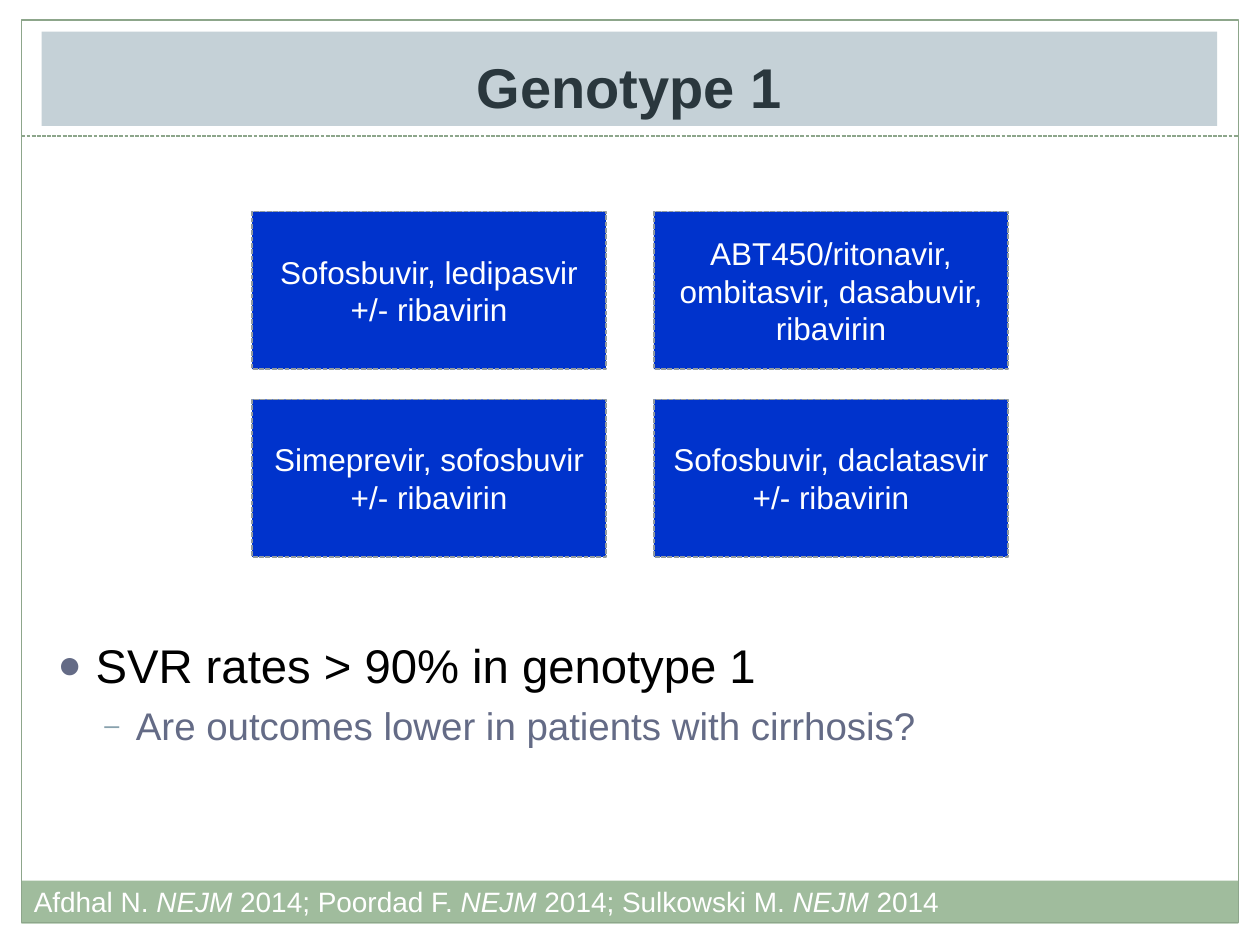
from lxml import etree
from pptx import Presentation
from pptx.dml.color import RGBColor
from pptx.enum import dml, shapes, text
from pptx.oxml import ns
from pptx.util import Inches, Pt

FONT = "Arial"
GREEN = "8DA68B"
SLATE = "646B86"
WHITE = "FFFFFF"


def color(value):
    """Turn a hex string into a colour."""
    return RGBColor.from_string(value)


def add_span(para, words, size, ink, bold=False, italic=False):
    """Append one formatted run to a paragraph."""
    span = para.add_run()
    span.text = words
    font = span.font
    font.name, font.size = FONT, Pt(size)
    font.bold, font.italic = bold, italic
    font.color.rgb = color(ink)


def style_line(line, ink, width, dashed=False):
    """Set the colour, width and dash of a line."""
    line.color.rgb = color(ink)
    line.width = Pt(width)
    if dashed:
        line.dash_style = dml.MSO_LINE.SQUARE_DOT


def add_panel(slide, left, top, width, height, fill=None):
    """Add a plain rectangle without shadow or outline."""
    panel = slide.shapes.add_shape(
        shapes.MSO_SHAPE.RECTANGLE,
        Inches(left), Inches(top), Inches(width), Inches(height))
    panel.shadow.inherit = False
    panel.line.fill.background()
    if fill:
        panel.fill.solid()
        panel.fill.fore_color.rgb = color(fill)
    else:
        panel.fill.background()
    return panel


def add_label(panel, words, size, ink, anchor, bold=False):
    """Write one centred paragraph in a rectangle."""
    frame = panel.text_frame
    frame.word_wrap = True
    frame.vertical_anchor = anchor
    para = frame.paragraphs[0]
    para.alignment = text.PP_ALIGN.CENTER
    add_span(para, words, size, ink, bold)


def add_text_box(slide, left, top, width, height):
    """Add a wrapping text box and return its text frame."""
    box = slide.shapes.add_textbox(
        Inches(left), Inches(top), Inches(width), Inches(height))
    box.text_frame.word_wrap = True
    return box.text_frame


def add_rule(slide, left, right, top):
    """Add a dashed horizontal line."""
    rule = slide.shapes.add_connector(
        shapes.MSO_CONNECTOR.STRAIGHT,
        Inches(left), Inches(top), Inches(right), Inches(top))
    style_line(rule.line, GREEN, 0.75, dashed=True)
    etree.SubElement(rule._element.spPr, ns.qn("a:effectLst"))


def set_bullet(para, mark, ink, percent, indent, hanging):
    """Give a paragraph a coloured bullet and a hanging indent."""
    props = para._p.get_or_add_pPr()
    props.set("marL", str(Inches(indent)))
    props.set("indent", str(-Inches(hanging)))
    tint = etree.SubElement(props, ns.qn("a:buClr"))
    etree.SubElement(tint, ns.qn("a:srgbClr"), val=ink)
    etree.SubElement(props, ns.qn("a:buSzPct"), val=str(percent * 1000))
    etree.SubElement(props, ns.qn("a:buFont"), typeface=FONT)
    etree.SubElement(props, ns.qn("a:buChar"), char=mark)


def add_frame(slide):
    """Draw the footer band, the border and the rule under the title."""
    add_panel(slide, 0.17, 6.99, 9.66, 0.34, "A0BC9D")
    border = add_panel(slide, 0.17, 0.16, 9.66, 7.16)
    style_line(border.line, GREEN, 0.75)
    add_rule(slide, 0.17, 9.83, 1.08)


def add_citations(slide):
    """Write the references with the journal name in italics."""
    para = add_text_box(slide, 0.17, 6.97, 9.5, 0.37).paragraphs[0]
    pieces = ("Afdhal N. ", "NEJM", " 2014; Poordad F. ", "NEJM",
              " 2014; Sulkowski M. ", "NEJM", " 2014")
    for piece in pieces:
        add_span(para, piece, 16, WHITE, italic=piece == "NEJM")


def add_findings(slide):
    """Write the two-level bullet list."""
    frame = add_text_box(slide, 0.36, 5, 9.08, 1.38)
    finding = frame.paragraphs[0]
    set_bullet(finding, "●", SLATE, 85, 0.3, 0.3)
    add_span(finding, "SVR rates > 90% in genotype 1", 27, "000000")
    question = frame.add_paragraph()
    question.level = 1
    set_bullet(question, "–", "88A1AD", 70, 0.62, 0.25)
    question.space_before = Pt(5)
    add_span(question, "Are outcomes lower in patients with cirrhosis?", 22, SLATE)


def add_regimens(slide):
    """Lay out the drug regimens in a two-by-two grid."""
    regimens = (
        ("Sofosbuvir, ledipasvir +/- ribavirin",
         "ABT450/ritonavir, ombitasvir, dasabuvir, ribavirin"),
        ("Simeprevir, sofosbuvir +/- ribavirin",
         "Sofosbuvir, daclatasvir +/- ribavirin"),
    )
    for row, names in enumerate(regimens):
        for column, name in enumerate(names):
            panel = add_panel(slide, 2 + 3.19 * column, 1.68 + 1.49 * row,
                              2.81, 1.25, "0033CC")
            style_line(panel.line, "929B9F", 0.9, dashed=True)
            add_label(panel, name, 18, WHITE, text.MSO_ANCHOR.MIDDLE)


def add_title(slide):
    """Add the title band."""
    band = add_panel(slide, 0.33, 0.25, 9.33, 0.75, "C5D1D7")
    add_label(band, "Genotype 1", 32, "2A373D", text.MSO_ANCHOR.BOTTOM, bold=True)


def main():
    """Build the slide and save the deck."""
    deck = Presentation()
    deck.slide_width, deck.slide_height = Inches(10), Inches(7.5)
    slide = deck.slides.add_slide(deck.slide_layouts[6])
    add_frame(slide)
    add_citations(slide)
    add_findings(slide)
    add_regimens(slide)
    add_title(slide)
    deck.save("out.pptx")


if __name__ == "__main__":
    main()
